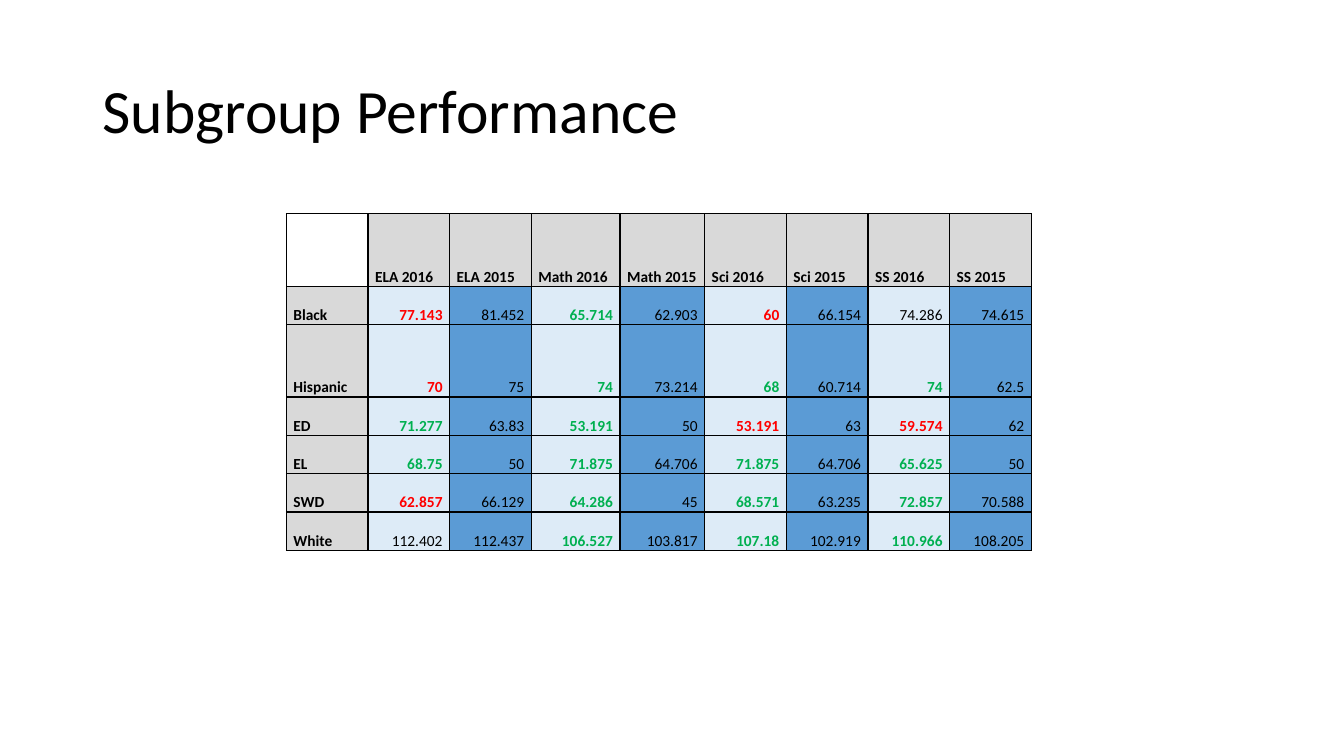
from lxml.etree import SubElement
from pptx import Presentation
from pptx.dml.color import RGBColor
from pptx.enum.text import MSO_ANCHOR, PP_ALIGN
from pptx.oxml.ns import qn
from pptx.util import Pt

PX = 9144  # 100 px to the inch
FONT = "Calibri"
BLACK = RGBColor(0x00, 0x00, 0x00)
RED = RGBColor(0xFF, 0x00, 0x00)
GREEN = RGBColor(0x00, 0xB0, 0x50)
GREY = RGBColor(0xD9, 0xD9, 0xD9)
PALE = RGBColor(0xDD, 0xEB, 0xF7)
BLUE = RGBColor(0x5B, 0x9B, 0xD5)

HEADS = [f"{test} {year}" for test in ("ELA", "Math", "Sci", "SS")
         for year in (2016, 2015)]
SCORES = {
    "Black": [77.143, 81.452, 65.714, 62.903, 60, 66.154, 74.286, 74.615],
    "Hispanic": [70, 75, 74, 73.214, 68, 60.714, 74, 62.5],
    "ED": [71.277, 63.83, 53.191, 50, 53.191, 63, 59.574, 62],
    "EL": [68.75, 50, 71.875, 64.706, 71.875, 64.706, 65.625, 50],
    "SWD": [62.857, 66.129, 64.286, 45, 68.571, 63.235, 72.857, 70.588],
    "White": [112.402, 112.437, 106.527, 103.817, 107.18, 102.919, 110.966, 108.205],
}
WIDTHS = [81, 81, 81, 88, 84, 81, 81, 81, 81]
HEIGHTS = [72, 38, 72, 38, 38, 38, 38]
FLAT = 0.5  # smaller changes count as no change


def set_font(para, size, color=BLACK, bold=False):
    for run in para.runs:
        font = run.font
        font.name, font.size, font.bold = FONT, Pt(size), bold
        font.color.rgb = color


def add_title(slide, text, left, top, width, height):
    box = slide.shapes.add_textbox(left * PX, top * PX, width * PX, height * PX)
    frame = box.text_frame
    frame.word_wrap = True
    frame.vertical_anchor = MSO_ANCHOR.MIDDLE
    frame.text = text
    para = frame.paragraphs[0]
    para.line_spacing = 0.9
    set_font(para, 44)


def add_edges(cell):
    """Draw a thin black line on all four sides of the cell."""
    props = cell._tc.get_or_add_tcPr()
    for side in ("lnL", "lnR", "lnT", "lnB"):
        line = SubElement(props, qn(f"a:{side}"), w=str(Pt(1)))
        fill = SubElement(line, qn("a:solidFill"))
        SubElement(fill, qn("a:srgbClr"), val=str(BLACK))


def fill_cell(cell, text, fill, color=BLACK, bold=True, align=PP_ALIGN.LEFT):
    add_edges(cell)
    cell.fill.solid()
    cell.fill.fore_color.rgb = fill
    cell.vertical_anchor = MSO_ANCHOR.BOTTOM
    cell.margin_left = cell.margin_right = 7 * PX
    cell.margin_top = cell.margin_bottom = 0
    cell.text_frame.text = text
    para = cell.text_frame.paragraphs[0]
    para.alignment = align
    para.line_spacing = 1.07
    set_font(para, 11, color, bold)


def trend_color(new, old):
    if abs(new - old) < FLAT:
        return BLACK
    return GREEN if new > old else RED


def add_scores(slide, left, top):
    frame = slide.shapes.add_table(
        len(HEIGHTS), len(WIDTHS), left * PX, top * PX,
        sum(WIDTHS) * PX, sum(HEIGHTS) * PX)
    table = frame.table
    table.first_row = table.horz_banding = False
    for col, width in zip(table.columns, WIDTHS):
        col.width = width * PX
    for row, height in zip(table.rows, HEIGHTS):
        row.height = height * PX

    corner = table.cell(0, 0)
    add_edges(corner)
    corner.fill.background()
    for col, head in enumerate(HEADS, 1):
        fill_cell(table.cell(0, col), head, GREY)
    for row, (group, marks) in enumerate(SCORES.items(), 1):
        fill_cell(table.cell(row, 0), group, GREY)
        for col in range(0, len(marks), 2):
            new, old = marks[col:col + 2]
            color = trend_color(new, old)
            fill_cell(table.cell(row, col + 1), str(new), PALE, color,
                      color != BLACK, PP_ALIGN.RIGHT)
            fill_cell(table.cell(row, col + 2), str(old), BLUE,
                      bold=False, align=PP_ALIGN.RIGHT)


def main():
    deck = Presentation()
    deck.slide_width, deck.slide_height = 1333 * PX, 750 * PX
    slide = deck.slides.add_slide(deck.slide_layouts[6])
    add_title(slide, "Subgroup Performance", 92, 40, 1150, 145)
    add_scores(slide, 284, 212)
    deck.save("out.pptx")


if __name__ == "__main__":
    main()
